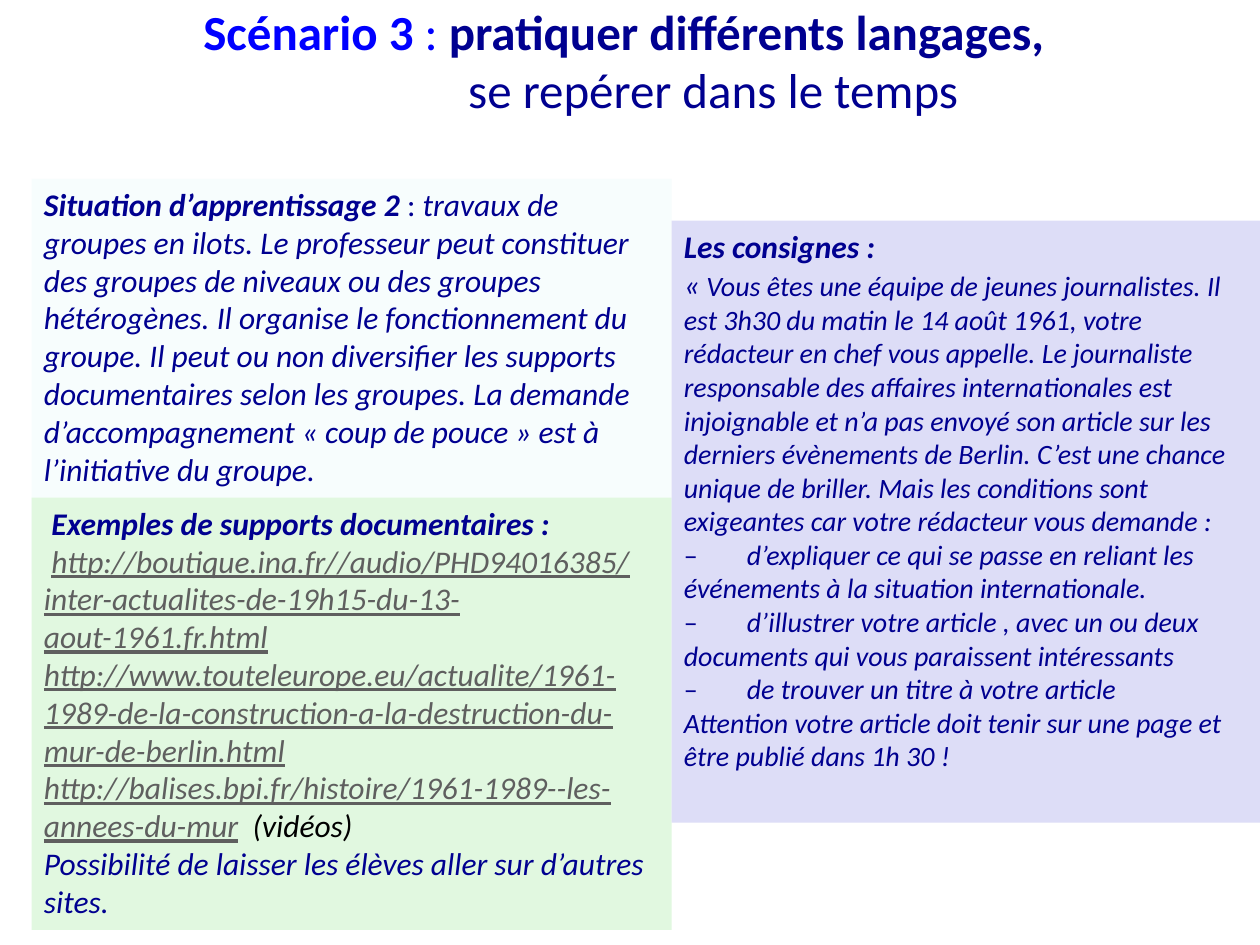
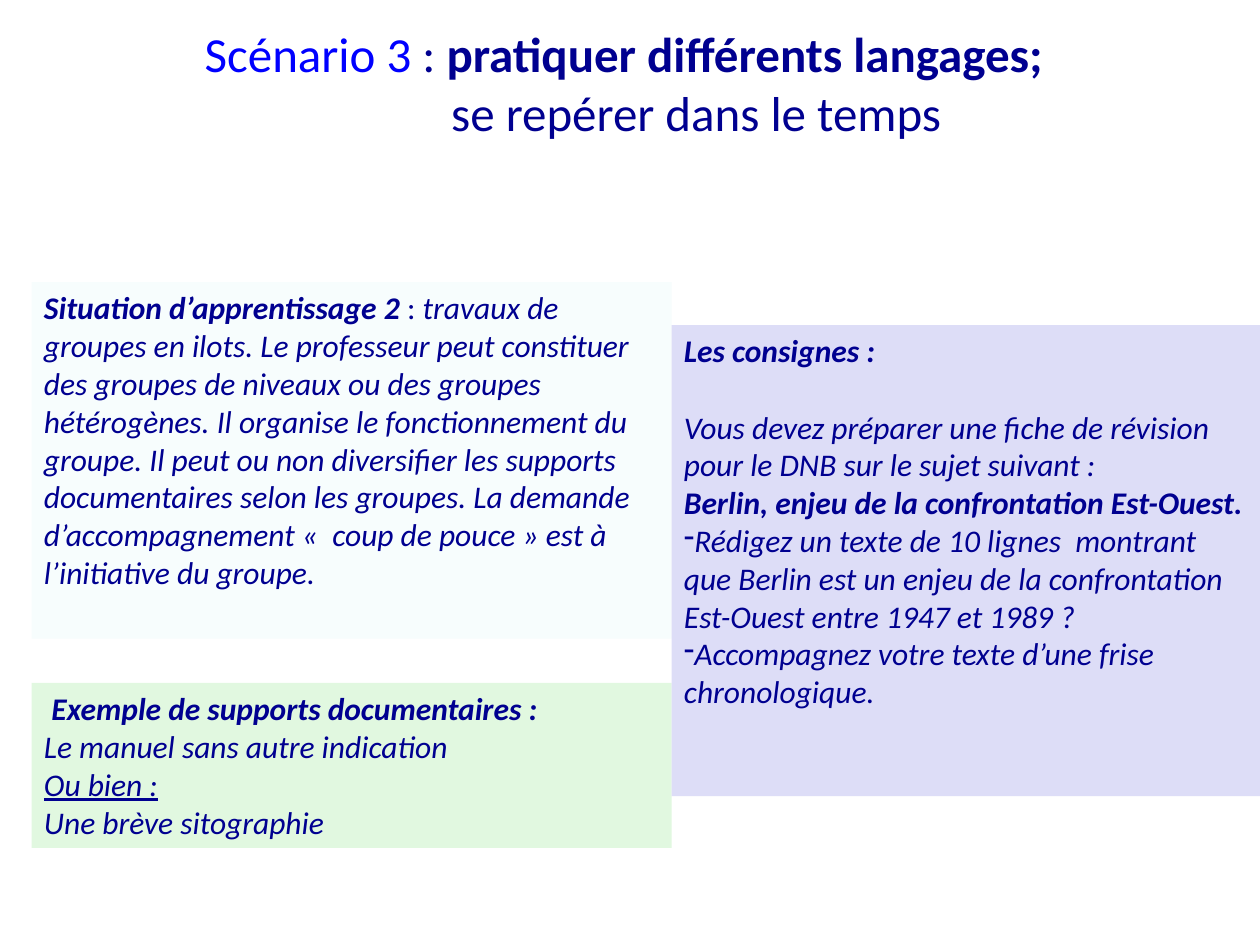
import pptx
import pptx.util
import pptx.dml.color
import pptx.enum.text
import pptx.enum.shapes
import lxml.etree
from pptx.oxml.ns import qn

Inches = pptx.util.Inches
Pt = pptx.util.Pt

HUES = {
    "blue": "0000FF",
    "navy": "000090",
    "black": "000000",
    "grey": "5F5F5F",
    "ice": "F7FDFD",
    "mint": "E1F8E0",
    "lilac": "DDDDF7",
}
FONT = "Calibri"
LEFT, MID, RIGHT = 0.25, 5.33, 10
NUDGE = 0.06


def color(name):
    return pptx.dml.color.RGBColor.from_string(HUES[name])


def run(text, bold=False, slant=True, hue="navy", line=False, size=None):
    """Describe one piece of text; size None takes the size of its box."""
    return text, bold, slant, hue, line, size


def para(*runs, indent=0, tab=None, mark=None, gap=0):
    """Describe one paragraph; a plain string is a run in the default style."""
    runs = [run(r) if isinstance(r, str) else r for r in runs]
    return runs, indent, tab, mark, gap


def head(text, indent=0):
    return para(run(text, bold=True), indent=indent)


def link(url, *rest, indent=0):
    return para(run(url, hue="grey", line=True), *rest, indent=indent)


def dash(text):
    return para(run("–\t", slant=False), text, tab=0.41)


def layout(p, indent, tab, mark):
    """Set first-line indent, bullet and tab stop, in schema order."""
    props = p._p.get_or_add_pPr()
    props.set("marL", "0")
    props.set("indent", str(Inches(indent)))
    if mark:
        lxml.etree.SubElement(props, qn("a:buChar")).set("char", mark)
    if tab:
        stops = lxml.etree.SubElement(props, qn("a:tabLst"))
        stop = lxml.etree.SubElement(stops, qn("a:tab"))
        stop.set("pos", str(Inches(tab)))
        stop.set("algn", "l")


def write(p, runs, size):
    for text, bold, slant, hue, line, own in runs:
        r = p.add_run()
        r.text = text
        font = r.font
        font.name = FONT
        font.size = Pt(own or size)
        font.bold = bold
        font.italic = slant
        font.underline = line
        font.color.rgb = color(hue)


def fill(frame, paras, size):
    for i, (runs, indent, tab, mark, gap) in enumerate(paras):
        p = frame.paragraphs[0] if i == 0 else frame.add_paragraph()
        p.alignment = pptx.enum.text.PP_ALIGN.LEFT
        layout(p, indent, tab, mark)
        if gap:
            p.space_before = Pt(gap)
        write(p, runs, size)


def panel(slide, left, top, right, height, hue, paras, size=18):
    box = slide.shapes.add_shape(
        pptx.enum.shapes.MSO_SHAPE.RECTANGLE,
        Inches(left), Inches(top), Inches(right - left), Inches(height))
    box.shadow.inherit = False
    box.fill.solid()
    box.fill.fore_color.rgb = color(hue)
    box.line.fill.background()
    frame = box.text_frame
    frame.word_wrap = True
    frame.vertical_anchor = pptx.enum.text.MSO_ANCHOR.TOP
    fill(frame, paras, size)


def title(slide, height, shift, *runs):
    """Write the two title lines, the second one shifted to the right."""
    box = slide.shapes.add_textbox(
        Inches(0.2), 0, Inches(9.5), Inches(height))
    frame = box.text_frame
    frame.word_wrap = True
    frame.vertical_anchor = pptx.enum.text.MSO_ANCHOR.MIDDLE
    frame.margin_bottom = Inches(0.52)
    first, second = frame.paragraphs[0], frame.add_paragraph()
    second._p.get_or_add_pPr().set("marL", str(Inches(shift)))
    for p in (first, second):
        p.alignment = pptx.enum.text.PP_ALIGN.CENTER
    write(first, runs, 28)
    write(second, [run("se repérer dans le temps", slant=False)], 28)


def task(slide, top, height, quote):
    panel(slide, LEFT, top, MID, height, "ice", [para(
        run("Situation d’apprentissage 2 ", bold=True),
        run(": ", slant=False),
        "travaux de groupes en ilots. Le professeur peut constituer des "
        "groupes de niveaux ou des groupes hétérogènes. Il organise le "
        "fonctionnement du groupe. Il peut ou non diversifier les supports "
        "documentaires selon les groupes. La demande d’accompagnement "
        f"{quote} est à l’initiative du groupe.")])


def press(deck):
    slide = deck.slides.add_slide(deck.slide_layouts[6])
    title(slide, 1.42, 1.42,
          run("Scénario 3", bold=True, slant=False, hue="blue"),
          run(" : ", slant=False, hue="blue"),
          run("pratiquer différents langages,", bold=True, slant=False))
    task(slide, 1.42, 3.13, "« coup de pouce »")
    panel(slide, LEFT, 3.95, MID, 3.43, "mint", [
        head("Exemples de supports documentaires :", indent=NUDGE),
        link("http://boutique.ina.fr//audio/PHD94016385/"
             "inter-actualites-de-19h15-du-13-aout-1961.fr.html",
             indent=NUDGE),
        link("http://www.touteleurope.eu/actualite/1961-1989-de-la-"
             "construction-a-la-destruction-du-mur-de-berlin.html"),
        link("http://balises.bpi.fr/histoire/1961-1989--les-annees-du-mur",
             run("  (vidéos)", hue="black")),
        para("Possibilité de laisser les élèves aller sur d’autres sites."),
    ])
    panel(slide, MID, 1.75, RIGHT, 4.78, "lilac", [
        para(run("Les consignes :", bold=True, size=18)),
        para(run("«", size=18),
             " Vous êtes une équipe de jeunes journalistes. Il est 3h30 du "
             "matin le 14 août 1961, votre rédacteur en chef vous appelle. "
             "Le journaliste responsable des affaires internationales est "
             "injoignable et n’a pas envoyé son article sur les derniers "
             "évènements de Berlin. C’est une chance unique de briller. Mais "
             "les conditions sont exigeantes car votre rédacteur vous "
             "demande :"),
        dash("d’expliquer ce qui se passe en reliant les événements à la "
             "situation internationale."),
        dash("d’illustrer votre article , avec un ou deux documents qui "
             "vous paraissent intéressants"),
        dash("de trouver un titre à votre article"),
        para("Attention votre article doit tenir sur une page et être "
             "publié dans 1h 30 !"),
    ], size=16)


def study(deck):
    slide = deck.slides.add_slide(deck.slide_layouts[6])
    title(slide, 1.78, 1.15,
          run("Scénario 3 ", slant=False, hue="blue"),
          run(": ", slant=False),
          run("pratiquer différents langages;", bold=True, slant=False))
    task(slide, 2.24, 2.83, "«  coup de pouce »")
    panel(slide, LEFT, 5.42, MID, 1.31, "mint", [
        head("Exemple de supports documentaires :", indent=NUDGE),
        para("Le manuel sans autre indication"),
        para(run("Ou bien :", line=True)),
        para("Une brève sitographie"),
    ])
    panel(slide, MID, 2.58, RIGHT, 3.74, "lilac", [
        head("Les consignes :"),
        para("Vous devez préparer une fiche de révision pour le DNB sur le "
             "sujet suivant :", gap=22),
        head("Berlin, enjeu de la confrontation Est-Ouest."),
        para("Rédigez un texte de 10 lignes  montrant que Berlin est un "
             "enjeu de la confrontation Est-Ouest entre 1947 et 1989 ?",
             mark="-"),
        para("Accompagnez votre texte d’une frise chronologique.", mark="-"),
    ])


def main():
    deck = pptx.Presentation()
    deck.slide_width, deck.slide_height = Inches(10), Inches(7.5)
    press(deck)
    study(deck)
    deck.save("out.pptx")


if __name__ == "__main__":
    main()
